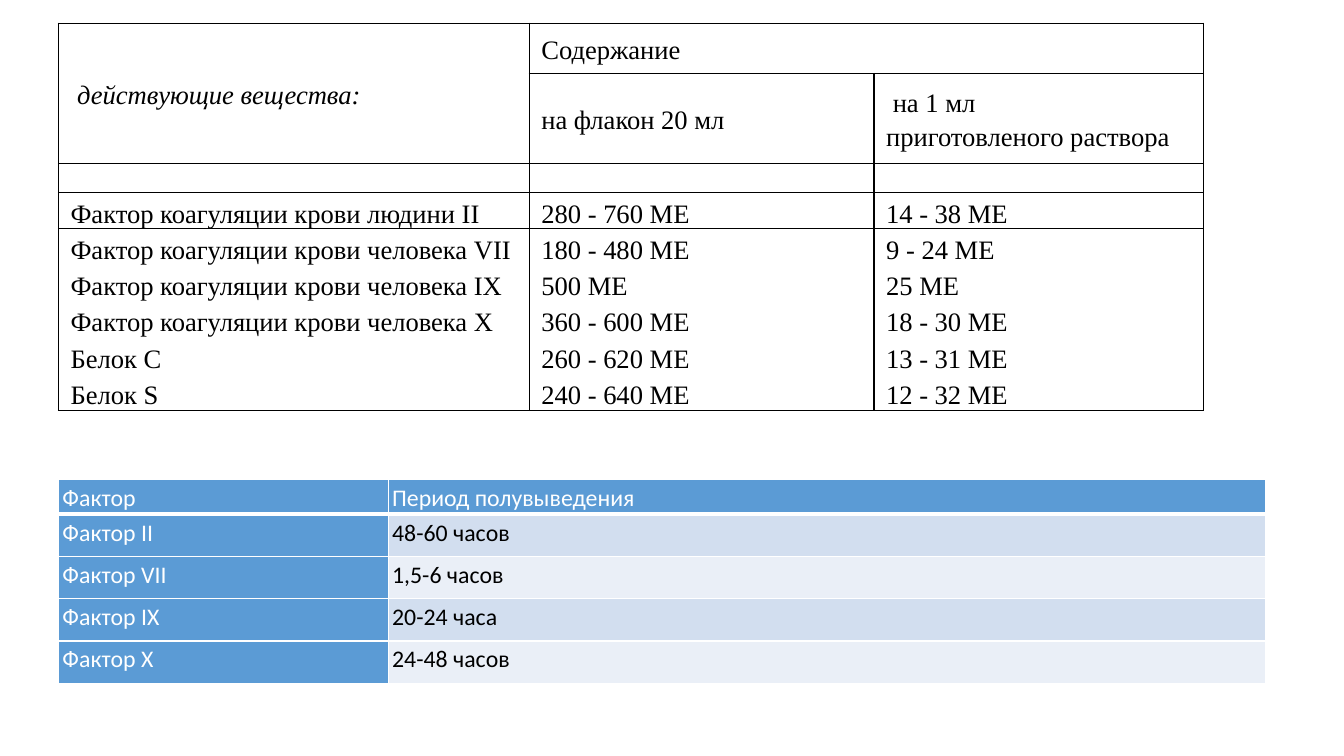
from lxml.etree import SubElement
from pptx import Presentation
from pptx.dml.color import RGBColor
from pptx.enum.text import MSO_ANCHOR, PP_ALIGN
from pptx.oxml.ns import qn
from pptx.util import Inches, Pt

# Content
SUBSTANCES = [
    (" действующие вещества:", "Содержание", ""),
    ("", "на флакон 20 мл", " на 1 мл\nприготовленого раствора"),
    ("", "", ""),
    ("Фактор коагуляции крови людини II", "280 - 760 МЕ", "14 - 38 МЕ"),
    ("Фактор коагуляции крови человека VII", "180 - 480 МЕ", "9 - 24 МЕ"),
    ("Фактор коагуляции крови человека IX", "500 МЕ", "25 МЕ"),
    ("Фактор коагуляции крови человека X", "360 - 600 МЕ", "18 - 30 МЕ"),
    ("Белок C", "260 - 620 МЕ", "13 - 31 МЕ"),
    ("Белок S", "240 - 640 МЕ", "12 - 32 МЕ"),
]
HALF_LIVES = [
    ("Фактор", "Период полувыведения"),
    ("Фактор II", "48-60 часов"),
    ("Фактор VII", "1,5-6 часов"),
    ("Фактор IX", "20-24 часа"),
    ("Фактор X", "24-48 часов"),
]

THEME = {
    "black": "000000", "white": "FFFFFF", "accent": "5B9BD5",
    "bands": ("D2DEEF", "EAEFF7"),
    "substances": {"name": "Times New Roman", "size": Pt(19)},
    "half_lives": {"name": "Calibri", "size": Pt(17)},
    "line_spacing": 1.15,
}
PLAIN_STYLE = "{2D5ABB26-0587-4C30-8999-92F81FD0307C}"
LEFT = 0.58
HEADER_ROWS = 3


def place_table(slide, rows, top, widths, heights):
    table = slide.shapes.add_table(
        len(heights), len(widths), Inches(LEFT), Inches(top),
        Inches(sum(widths)), Inches(sum(heights))).table
    table.first_row = table.horz_banding = False
    table._tbl.tblPr.find(qn("a:tableStyleId")).text = PLAIN_STYLE
    for column, width in zip(table.columns, widths):
        column.width = Inches(width)
    for row, height in zip(table.rows, heights):
        row.height = Inches(height)
    for r, texts in enumerate(rows):
        for c, text in enumerate(texts):
            table.cell(r, c).text_frame.text = text
    return table


def draw_borders(cell, color, widths):
    properties = cell._tc.get_or_add_tcPr()
    for side in "LRTB":
        if side in widths:
            line = SubElement(properties, qn(f"a:ln{side}"), w=str(Pt(widths[side])))
            fill = SubElement(line, qn("a:solidFill"))
            SubElement(fill, qn("a:srgbClr"), val=color)


def format_cell(cell, font, color, inset, anchor, fill=None):
    layout = {"margin_left": Inches(inset), "margin_right": Inches(inset),
              "margin_top": 0, "margin_bottom": 0, "vertical_anchor": anchor}
    for key, value in layout.items():
        setattr(cell, key, value)
    if fill:
        cell.fill.solid()
        cell.fill.fore_color.rgb = RGBColor.from_string(fill)
    for paragraph in cell.text_frame.paragraphs:
        paragraph.alignment = PP_ALIGN.JUSTIFY
        paragraph.line_spacing = THEME["line_spacing"]
        for run in paragraph.runs:
            for key, value in font.items():
                setattr(run.font, key, value)
            run.font.color.rgb = RGBColor.from_string(color)
        if not paragraph.runs:  # keeps the empty row low
            SubElement(paragraph._p, qn("a:endParaRPr"), sz="1200")


def add_substances(slide):
    heights = [0.5, 0.89, 0.29] + [0.36] * (len(SUBSTANCES) - HEADER_ROWS)
    table = place_table(slide, SUBSTANCES, 0.23, [4.67, 3.42, 3.27], heights)
    table.cell(0, 0).merge(table.cell(1, 0))
    table.cell(0, 1).merge(table.cell(0, 2))
    last = len(SUBSTANCES) - 1
    for r in range(len(SUBSTANCES)):
        for c in range(3):
            cell = table.cell(r, c)
            if cell.is_spanned:
                continue
            sides = "LR" + "T" * (r <= HEADER_ROWS) + "B" * (r < HEADER_ROWS or r == last)
            draw_borders(cell, THEME["black"], dict.fromkeys(sides, 1))
            anchor = MSO_ANCHOR.MIDDLE if r < HEADER_ROWS else MSO_ANCHOR.BOTTOM
            font = {**THEME["substances"], "italic": r == c == 0}
            format_cell(cell, font, THEME["black"], 0.12, anchor)


def add_half_lives(slide):
    heights = [0.34] + [0.42] * (len(HALF_LIVES) - 1)
    table = place_table(slide, HALF_LIVES, 4.76, [3.27, 8.7], heights)
    for r in range(len(HALF_LIVES)):
        for c in range(2):
            cell = table.cell(r, c)
            heading = r == 0 or c == 0
            draw_borders(cell, THEME["white"], {"L": 1, "R": 1, "T": 1, "B": 1 if r else 3})
            format_cell(cell, THEME["half_lives"],
                        THEME["white" if heading else "black"], 0.04, MSO_ANCHOR.TOP,
                        THEME["accent"] if heading else THEME["bands"][(r - 1) % 2])


def main():
    deck = Presentation()
    deck.slide_width, deck.slide_height = Inches(13.33), Inches(7.5)
    slide = deck.slides.add_slide(deck.slide_layouts[6])
    add_substances(slide)
    add_half_lives(slide)
    deck.save("out.pptx")


if __name__ == "__main__":
    main()
